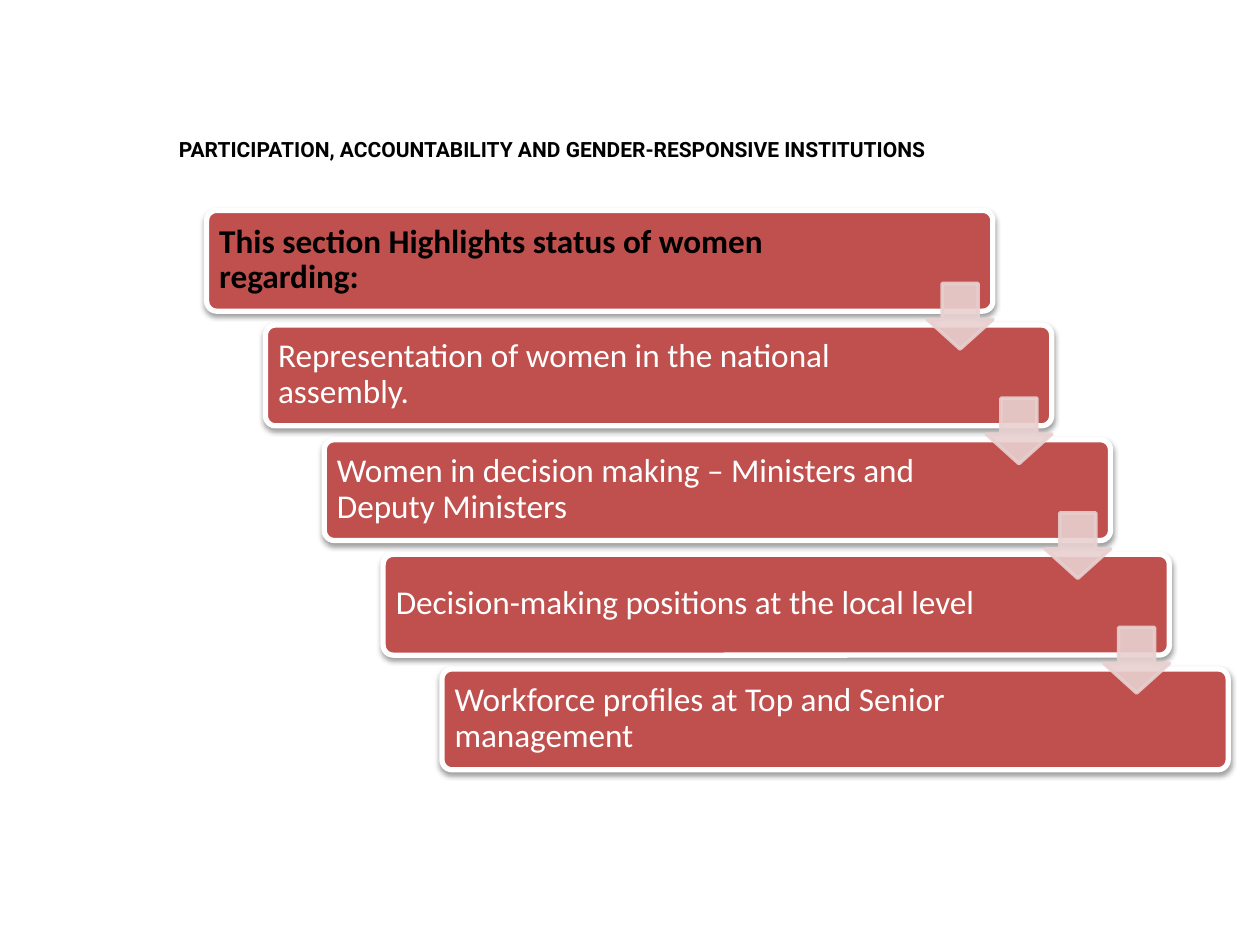
from lxml.etree import SubElement
from pptx import Presentation
from pptx.dml.color import RGBColor
from pptx.enum.shapes import MSO_SHAPE
from pptx.enum.text import MSO_ANCHOR, PP_ALIGN
from pptx.oxml.ns import qn
from pptx.util import Inches, Pt

HEADING = "PARTICIPATION, ACCOUNTABILITY AND GENDER-RESPONSIVE INSTITUTIONS"
STEPS = [
    "This section Highlights status of women regarding:",
    "Representation of women in the national assembly.",
    "Women in decision making – Ministers and Deputy Ministers",
    "Decision-making positions at the local level",
    "Workforce profiles at Top and Senior management",
]
RED, PINK, WHITE, BLACK = "C0504D", "E8D0D0", "FFFFFF", "000000"
LEFT, TOP, WIDTH, HEIGHT = 1.64, 1.67, 6.24, 0.8
STEP_X, STEP_Y = 0.467, 0.91
ARROW = 0.52


def color(hex_code):
    return RGBColor.from_string(hex_code)


def style_text(frame, text, font_name, size, hex_code, bold, inset):
    frame.word_wrap = True
    frame.margin_left = frame.margin_right = Inches(inset)
    frame.margin_top = frame.margin_bottom = Inches(inset)
    frame.text = text
    paragraph = frame.paragraphs[0]
    paragraph.alignment = PP_ALIGN.LEFT
    font = paragraph.runs[0].font
    font.name, font.size, font.bold = font_name, Pt(size), bold
    font.color.rgb = color(hex_code)
    return paragraph


def add_block(slide, kind, box, adjustments, fill, line, line_width):
    block = slide.shapes.add_shape(kind, *map(Inches, box))
    for index, value in enumerate(adjustments):
        block.adjustments[index] = value
    block.shadow.inherit = False
    block.fill.solid()
    block.fill.fore_color.rgb = color(fill)
    block.line.color.rgb = color(line)
    block.line.width = Pt(line_width)
    return block


def add_shadow(block):
    effects = block._element.spPr.find(qn("a:effectLst"))
    shadow = SubElement(effects, qn("a:outerShdw"), blurRad=str(Pt(3.1)),
                        dist=str(Pt(1.6)), dir="5400000", rotWithShape="0")
    shade = SubElement(shadow, qn("a:srgbClr"), val=BLACK)
    SubElement(shade, qn("a:alpha"), val="38000")


def add_step(slide, index, text):
    left, top = LEFT + index * STEP_X, TOP + index * STEP_Y
    bar = add_block(slide, MSO_SHAPE.ROUNDED_RECTANGLE,
                    (left, top, WIDTH, HEIGHT), [0.1], RED, WHITE, 3)
    add_shadow(bar)
    first = index == 0
    label_box = (left + 0.02, top + 0.02, 5.29 if first else 5.21, 0.75)
    label = slide.shapes.add_textbox(*map(Inches, label_box)).text_frame
    label.vertical_anchor = MSO_ANCHOR.MIDDLE
    paragraph = style_text(label, text, "Calibri", 19,
                           BLACK if first else WHITE, first, 0.08)
    paragraph.line_spacing = 0.9


def add_arrow(slide, index):
    left = LEFT + WIDTH - ARROW + index * STEP_X
    top = TOP + 0.58 + index * STEP_Y
    arrow = add_block(slide, MSO_SHAPE.DOWN_ARROW, (left, top, ARROW, ARROW),
                      [0.55, 0.45], PINK, PINK, 2)
    for tint in arrow._element.spPr.iter(qn("a:srgbClr")):
        SubElement(tint, qn("a:alpha"), val="90000")


def main():
    deck = Presentation()
    deck.slide_width, deck.slide_height = Inches(10), Inches(7.5)
    slide = deck.slides.add_slide(deck.slide_layouts[5])
    title = slide.shapes.title
    title.left, title.top = Inches(1.42), Inches(1.08)
    title.width, title.height = Inches(7.17), Inches(0.63)
    title.text_frame.vertical_anchor = MSO_ANCHOR.TOP
    style_text(title.text_frame, HEADING, "Roboto", 12, BLACK, True, 0)
    for index, text in enumerate(STEPS):
        add_step(slide, index, text)
    for index in range(len(STEPS) - 1):
        add_arrow(slide, index)
    deck.save("out.pptx")


if __name__ == "__main__":
    main()
